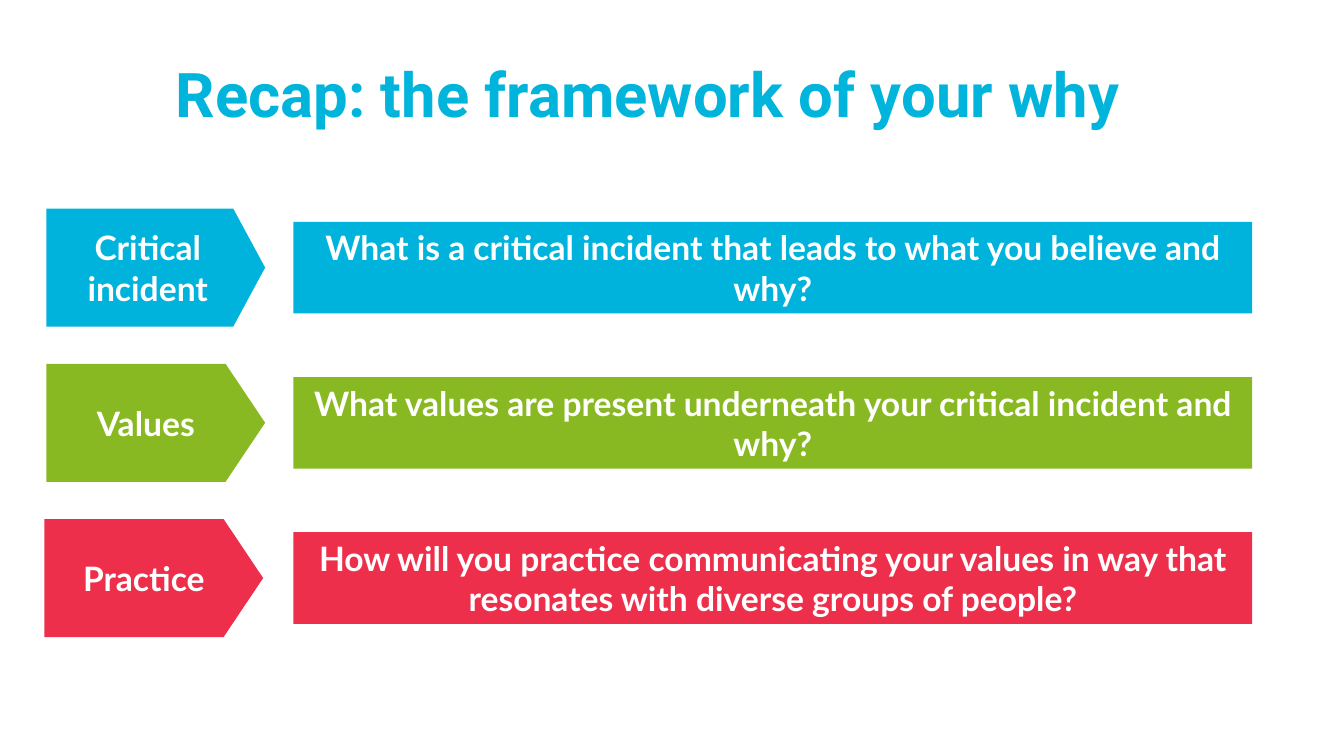
from pptx import Presentation
from pptx.dml.color import RGBColor
from pptx.enum.shapes import MSO_SHAPE as Preset
from pptx.enum.text import MSO_ANCHOR as Anchor, PP_ALIGN as Align
from pptx.util import Inches, Pt

COLORS = {
    "title": "00B4DC",
    "blue": "00B3DC",
    "green": "89B922",
    "red": "EE2F4B",
    "white": "FFFFFF",
}

# Stage, question, colour, left edge of the stage arrow, depth of its point
STEPS = [
    ("Critical incident",
     "What is a critical incident that leads to what you believe and why?",
     "blue", 0.46, 0.27),
    ("Values",
     "What values are present underneath your critical incident and why?",
     "green", 0.46, 0.335),
    ("Practice",
     "How will you practice communicating your values in way that "
     "resonates with diverse groups of people?",
     "red", 0.44, 0.335),
]
ROW_TOP, ROW_PITCH, ROW_HEIGHT = 2.07, 1.54, 1.17
STAGE_WIDTH = 2.17
QUESTION_LEFT, QUESTION_WIDTH, QUESTION_HEIGHT = 2.91, 9.51, 0.91


def rgb(name):
    return RGBColor.from_string(COLORS[name])


def write(frame, text, font_name, size, color):
    """Put one bold, centred run in a text frame."""
    frame.word_wrap = True
    paragraph = frame.paragraphs[0]
    paragraph.alignment = Align.CENTER
    run = paragraph.add_run()
    run.text = text
    run.font.name = font_name
    run.font.size = Pt(size)
    run.font.bold = True
    run.font.color.rgb = rgb(color)
    return paragraph


def add_title(slide, left, top, width, height):
    title = slide.shapes.title
    title.left, title.top = Inches(left), Inches(top)
    title.width, title.height = Inches(width), Inches(height)
    title.text_frame.vertical_anchor = Anchor.TOP
    heading = write(title.text_frame, "Recap: the framework of your why",
                    "Roboto", 44, "title")
    heading.line_spacing = 0.8
    heading.space_before = Pt(0)


def add_block(slide, preset, text, color, left, top, width, height):
    block = slide.shapes.add_shape(
        preset, Inches(left), Inches(top), Inches(width), Inches(height))
    block.shadow.inherit = False
    block.fill.solid()
    block.fill.fore_color.rgb = rgb(color)
    block.line.fill.background()
    block.text_frame.vertical_anchor = Anchor.MIDDLE
    write(block.text_frame, text, "Lato", 24, "white")
    return block


def add_step(slide, step, top):
    stage, question, color, left, point = step
    # Stage arrow
    arrow = add_block(slide, Preset.PENTAGON, stage, color,
                      left, top, STAGE_WIDTH, ROW_HEIGHT)
    arrow.adjustments[0] = point
    # Question bar, centred on the arrow
    add_block(slide, Preset.RECTANGLE, question, color, QUESTION_LEFT,
              top + (ROW_HEIGHT - QUESTION_HEIGHT) / 2,
              QUESTION_WIDTH, QUESTION_HEIGHT)


def main():
    deck = Presentation()
    deck.slide_width, deck.slide_height = Inches(13.33), Inches(7.5)
    slide = deck.slides.add_slide(deck.slide_layouts.get_by_name("Title Only"))
    add_title(slide, 0.44, 0.65, 11.98, 0.71)
    for row, step in enumerate(STEPS):
        add_step(slide, step, ROW_TOP + row * ROW_PITCH)
    deck.save("out.pptx")


if __name__ == "__main__":
    main()
